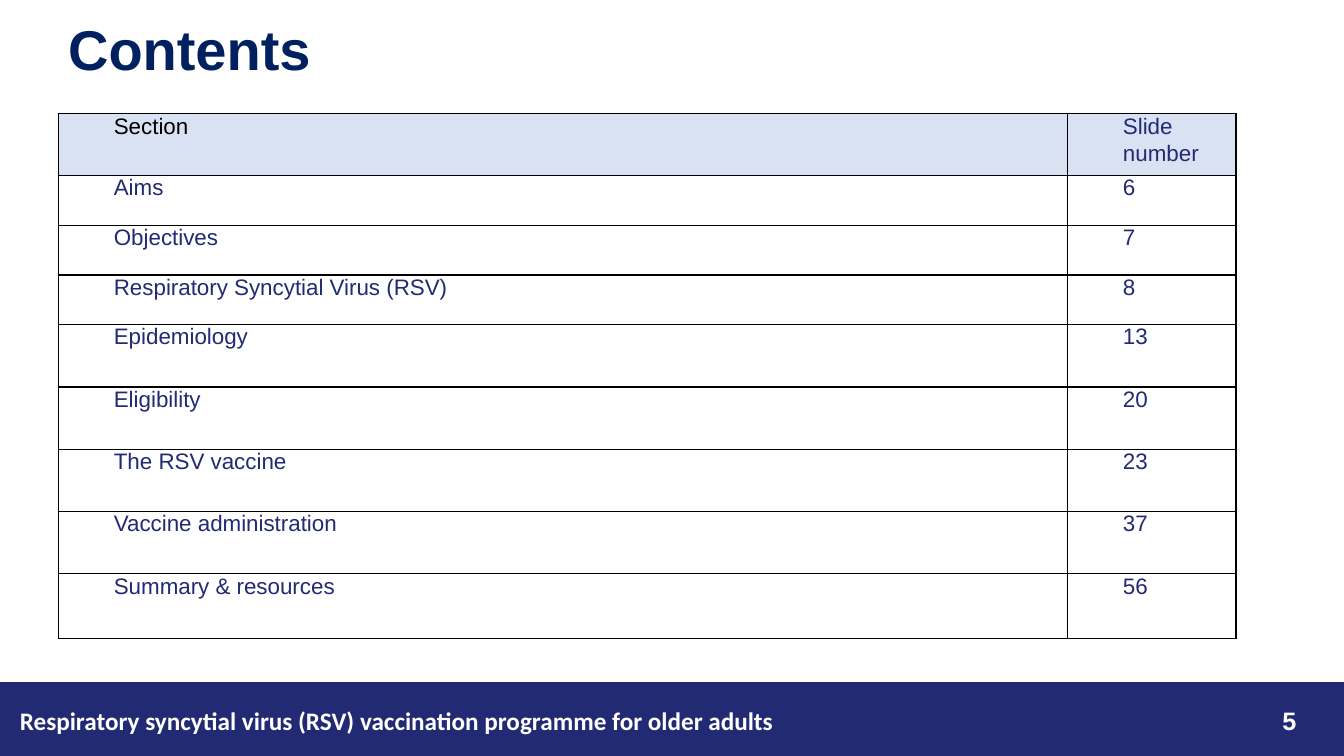
from lxml.etree import SubElement
from pptx import Presentation
from pptx.dml.color import RGBColor
from pptx.enum.shapes import MSO_SHAPE as Preset
from pptx.enum.text import PP_ALIGN as Align
from pptx.oxml.ns import qn
from pptx.util import Cm, Pt

NAVY = "212A73"
TITLE_BLUE = "002060"
HEADER_BLUE = "D9E2F3"
BLACK = "000000"
WHITE = "FFFFFF"

SECTIONS = [
    ("Section", "Slide number"),
    ("Aims", "6"),
    ("Objectives", "7"),
    ("Respiratory Syncytial Virus (RSV)", "8"),
    ("Epidemiology", "13"),
    ("Eligibility", "20"),
    ("The RSV vaccine", "23"),
    ("Vaccine administration", "37"),
    ("Summary & resources", "56"),
]
COLUMN_WIDTHS = [25.43, 4.25]
ROW_HEIGHTS = [1.58] + [1.25] * 3 + [1.57] * 4 + [1.62]


def color(value):
    return RGBColor.from_string(value)


class SlideBuilder:
    def __init__(self, slide):
        self.slide = slide

    def format(self, para, size, shade, bold=False, font="Arial"):
        for span in para.runs:
            span.font.name = font
            span.font.size = Pt(size)
            span.font.bold = bold
            span.font.color.rgb = color(shade)

    def bar(self, left, top, width, height, shade):
        bar = self.slide.shapes.add_shape(
            Preset.RECTANGLE, Cm(left), Cm(top), Cm(width), Cm(height))
        bar.shadow.inherit = False
        bar.fill.solid()
        bar.fill.fore_color.rgb = color(shade)
        bar.line.color.rgb = color(shade)
        bar.line.width = Pt(1)

    def text(self, words, left, top, width, height, size, shade,
             font="Arial", align=Align.LEFT, spacing=1.0):
        box = self.slide.shapes.add_textbox(
            Cm(left), Cm(top), Cm(width), Cm(height))
        frame = box.text_frame
        frame.word_wrap = True
        frame.text = words
        para = frame.paragraphs[0]
        para.alignment = align
        para.line_spacing = spacing
        self.format(para, size, shade, True, font)

    def borders(self, cell):
        properties = cell._tc.get_or_add_tcPr()
        for side in ("a:lnL", "a:lnR", "a:lnT", "a:lnB"):
            line = SubElement(properties, qn(side), w=str(Pt(1)))
            fill = SubElement(line, qn("a:solidFill"))
            SubElement(fill, qn("a:srgbClr"), val=BLACK)

    def cell(self, cell, words, shade, fill=None):
        cell.margin_left = cell.margin_right = Cm(0.13)
        cell.margin_top = cell.margin_bottom = 0
        self.borders(cell)
        if fill:
            cell.fill.solid()
            cell.fill.fore_color.rgb = color(fill)
        else:
            cell.fill.background()
        cell.text_frame.text = words
        para = cell.text_frame.paragraphs[0]
        para._p.get_or_add_pPr().set("marL", str(Cm(1.27)))
        para.line_spacing = 1.07 if fill else 1.0
        self.format(para, 16, shade)

    def table(self, rows, left, top, widths, heights):
        table = self.slide.shapes.add_table(
            len(rows), len(widths), Cm(left), Cm(top),
            Cm(sum(widths)), Cm(sum(heights))).table
        table.first_row = table.horz_banding = False
        for column, width in zip(table.columns, widths):
            column.width = Cm(width)
        for row, height in zip(table.rows, heights):
            row.height = Cm(height)
        for i, row in enumerate(rows):
            for j, words in enumerate(row):
                shade = BLACK if i == j == 0 else NAVY
                self.cell(table.cell(i, j), words, shade,
                          HEADER_BLUE if i == 0 else None)


def main():
    deck = Presentation()
    deck.slide_width, deck.slide_height = Cm(33.87), Cm(19.05)
    builder = SlideBuilder(deck.slides.add_slide(deck.slide_layouts[6]))
    builder.bar(0, 17.2, 33.87, 1.85, NAVY)
    builder.text("Contents", 1.47, 0.43, 29.69, 2, 40, TITLE_BLUE, spacing=0.9)
    builder.table(SECTIONS, 1.47, 2.85, COLUMN_WIDTHS, ROW_HEIGHTS)
    builder.text("5", 31.52, 17.65, 1.4, 1.02, 18, WHITE, align=Align.RIGHT)
    builder.text(
        "Respiratory syncytial virus (RSV) vaccination programme for older adults",
        0.25, 17.65, 26.19, 1.12, 18, WHITE, font="Calibri")
    deck.save("out.pptx")


if __name__ == "__main__":
    main()
